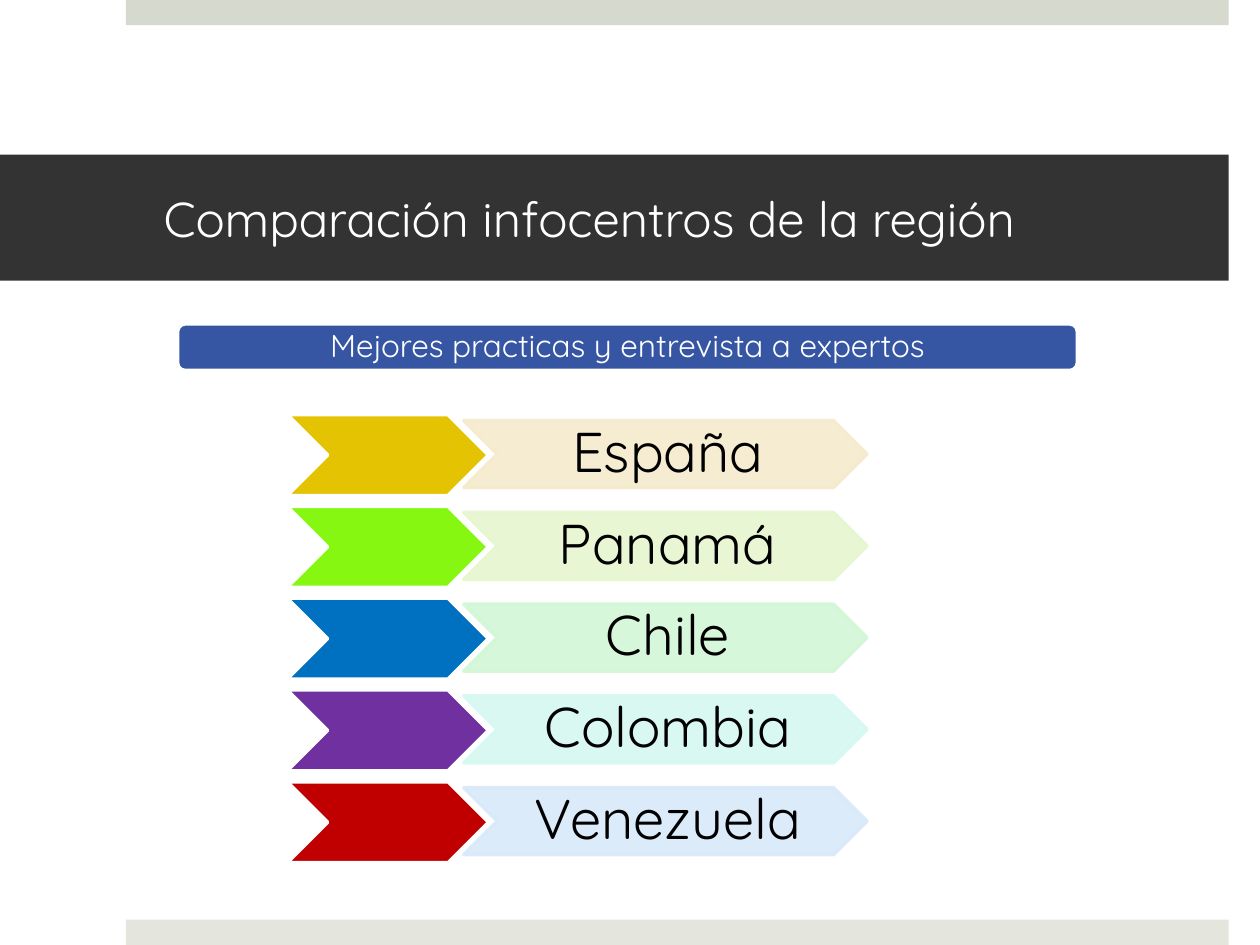
import pptx
import pptx.util
import pptx.dml.color
import pptx.enum.shapes
import pptx.enum.text
import pptx.oxml
import pptx.oxml.ns

Cm, Pt = pptx.util.Cm, pptx.util.Pt
KIND = pptx.enum.shapes.MSO_SHAPE
ALIGN = pptx.enum.text.PP_ALIGN
HUES = {
    "white": "FFFFFF", "black": "000000", "band": "333333",
    "top": "D6D9CD", "foot": "E4E6DE", "pill": "21449B",
}
ROWS = [
    ("España", "E4C402", "F5EACC"),
    ("Panamá", "85F711", "E6F6CF"),
    ("Chile", "0070C0", "D2F7D6"),
    ("Colombia", "7030A0", "D5F8F0"),
    ("Venezuela", "C00000", "D8E9F9"),
]


class Deck:
    """Holds the style and the current slide."""
    font = "Quicksand"
    edge = 2

    def __init__(self):
        self.show = pptx.Presentation()
        self.show.slide_width, self.show.slide_height = Cm(25.4), Cm(19.05)
        self.slide = self.show.slides.add_slide(self.show.slide_layouts[6])

    def paint(self, fill, hue, alpha):
        fill.solid()
        fill.fore_color.rgb = pptx.dml.color.RGBColor.from_string(hue)
        if alpha < 100:
            node = fill._xPr.find(".//" + pptx.oxml.ns.qn("a:srgbClr"))
            node.append(pptx.oxml.parse_xml(
                f'<a:alpha {pptx.oxml.ns.nsdecls("a")} val="{alpha * 1000}"/>'))

    def shape(self, kind, box, hue, line=None, alpha=100, rim=100):
        item = self.slide.shapes.add_shape(kind, *map(Cm, box))
        item.shadow.inherit = False
        self.paint(item.fill, hue, alpha)
        if line:
            self.paint(item.line.fill, line, rim)
            item.line.width = Pt(self.edge)
        else:
            item.line.fill.background()
        return item

    def text(self, item, words, size, hue, pads, align=ALIGN.CENTER, lead=0.9):
        frame = item.text_frame
        frame.word_wrap = True
        frame.vertical_anchor = pptx.enum.text.MSO_ANCHOR.MIDDLE
        (frame.margin_left, frame.margin_top,
         frame.margin_right, frame.margin_bottom) = map(Cm, pads)
        para = frame.paragraphs[0]
        para.text = words
        para.alignment, para.line_spacing = align, lead
        para.font.name, para.font.size = self.font, Pt(size)
        para.font.color.rgb = pptx.dml.color.RGBColor.from_string(hue)

    def label(self, box, *style):
        self.text(self.slide.shapes.add_textbox(*map(Cm, box)), *style)


def main():
    deck = Deck()

    # Bars at the top and foot
    deck.shape(KIND.RECTANGLE, (2.54, 0, 22.23, 0.51), HUES["top"])
    deck.shape(KIND.RECTANGLE, (2.54, 18.54, 22.23, 0.51), HUES["foot"])

    # Title band
    band = deck.shape(KIND.RECTANGLE, (0, 3.12, 24.77, 2.54), HUES["band"])
    deck.text(band, "Comparación infocentros de la región", 28, HUES["white"],
              (3.3, 0.13, 0.76, 0.13), ALIGN.LEFT, 1.0)

    # Country rows: a bright chevron, then a pale one with the name
    for row, (name, bright, pale) in enumerate(ROWS):
        drop = row * 1.85
        deck.shape(KIND.CHEVRON, (5.79, 8.36 + drop, 4.06, 1.63),
                   bright, HUES["white"])
        box = (9.35, 8.48 + drop, 8.13, 1.35)
        deck.shape(KIND.CHEVRON, box, pale, pale, 90, 90)
        deck.label(box, name, 32, HUES["black"], (0.1, 0.05, 0, 0.05))

    # Subtitle pill
    box = (3.58, 6.53, 18.14, 0.94)
    deck.shape(KIND.ROUNDED_RECTANGLE, box, HUES["pill"], HUES["white"], 90)
    deck.label(box, "Mejores practicas y entrevista a expertos", 18,
               HUES["white"], (0.18,) * 4)

    deck.show.save("out.pptx")


if __name__ == "__main__":
    main()
